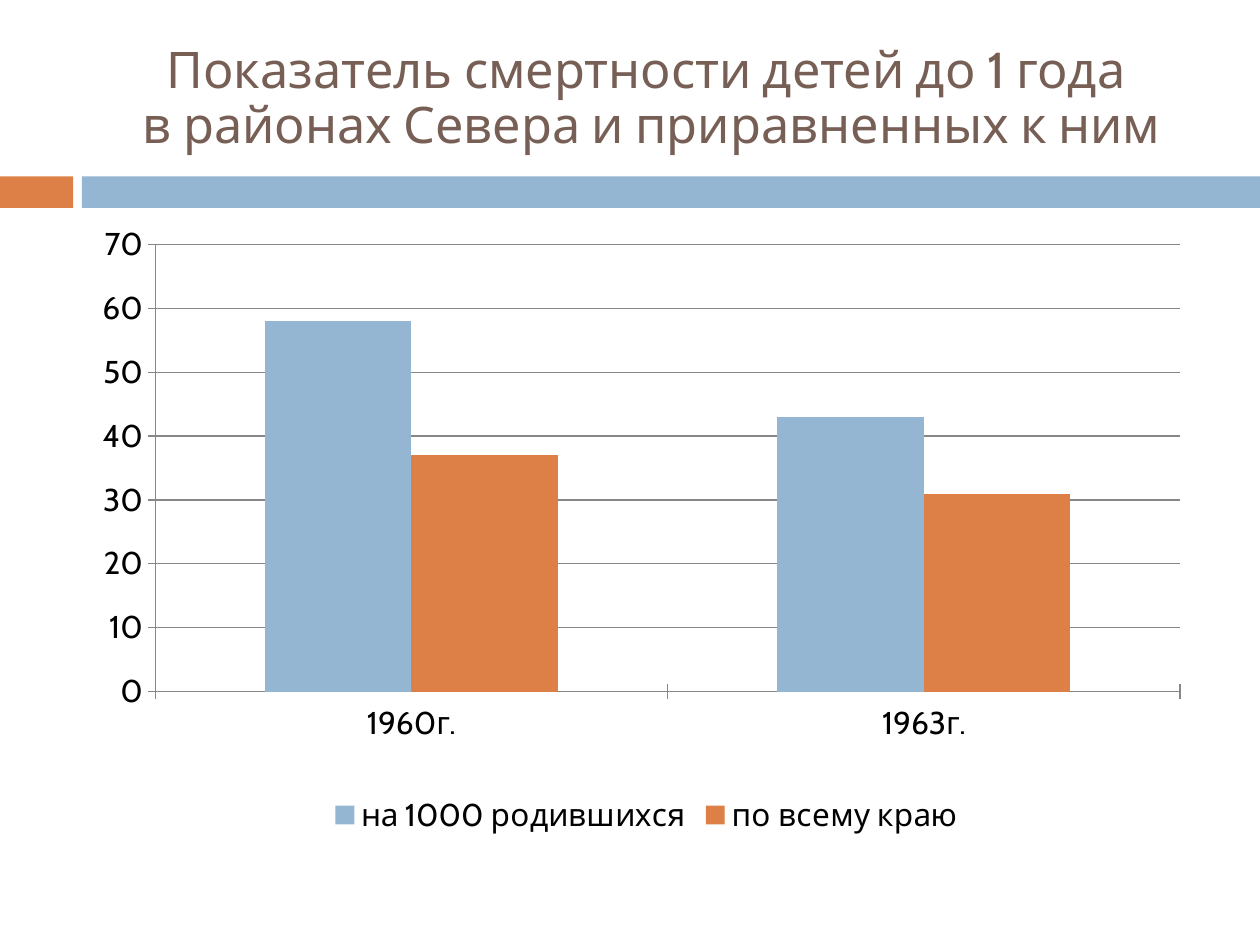
from dataclasses import dataclass

from lxml import etree
from pptx import Presentation
from pptx.chart.data import CategoryChartData
from pptx.dml.color import RGBColor
from pptx.enum.chart import XL_CHART_TYPE, XL_LEGEND_POSITION, XL_TICK_MARK
from pptx.enum.shapes import MSO_SHAPE
from pptx.enum.text import MSO_ANCHOR, MSO_AUTO_SIZE, PP_ALIGN
from pptx.oxml.ns import qn
from pptx.util import Inches, Pt

COLUMN = XL_CHART_TYPE.COLUMN_CLUSTERED
BOTTOM = XL_LEGEND_POSITION.BOTTOM
CROSS = XL_TICK_MARK.CROSS
RECT = MSO_SHAPE.RECTANGLE
MIDDLE = MSO_ANCHOR.MIDDLE
NO_FIT = MSO_AUTO_SIZE.NONE
CENTER = PP_ALIGN.CENTER


@dataclass(frozen=True)
class Theme:
    """Colours, font and type sizes of the slide."""
    blue: RGBColor = RGBColor.from_string("94B6D2")
    orange: RGBColor = RGBColor.from_string("DD8047")
    brown: RGBColor = RGBColor.from_string("775F55")
    black: RGBColor = RGBColor.from_string("000000")
    gray: RGBColor = RGBColor.from_string("878787")
    font: str = "Cabin"
    title: Pt = Pt(28.8)
    label: Pt = Pt(18)


THEME = Theme()
TITLE = ("Показатель смертности детей до 1 года\v"
         " в районах Севера и приравненных к ним")
YEARS = ["1960г.", "1963г."]
RATES = [
    ("на 1000 родившихся", (58, 43), THEME.blue),
    ("по всему краю", (37, 31), THEME.orange),
]
BANDS = [
    ((0, 1.4, 0.58, 0.25), THEME.orange),
    ((0.65, 1.4, 9.35, 0.25), THEME.blue),
]
PLOT = {"x": 0.063, "y": 0.039, "w": 0.912, "h": 0.721}


def apply(target, **values):
    """Set each named value on the target."""
    for name, value in values.items():
        setattr(target, name, value)


def style(font, size, color):
    """Give a font the theme face, a size and a colour."""
    apply(font, name=THEME.font, size=size, bold=False)
    font.color.rgb = color


def add_band(slide, box, color):
    """Draw one plain colour band."""
    band = slide.shapes.add_shape(RECT, *map(Inches, box))
    band.shadow.inherit = False
    band.fill.solid()
    band.fill.fore_color.rgb = color
    band.line.fill.background()


def set_title(slide, text, box):
    """Place and format the title."""
    title = slide.shapes.title
    apply(title, **dict(zip(("left", "top", "width", "height"), map(Inches, box))))
    frame = title.text_frame
    apply(frame, text=text, vertical_anchor=MIDDLE, word_wrap=True, auto_size=NO_FIT)
    line = frame.paragraphs[0]
    apply(line, alignment=CENTER, line_spacing=0.9)
    for run in line.runs:
        style(run.font, THEME.title, THEME.brown)


def set_plot(chart, place):
    """Fix the inner plot area as shares of the chart."""
    area = chart.plots[0]._element.getparent()
    for old in area.findall(qn("c:layout")):
        area.remove(old)
    layout = etree.Element(qn("c:layout"))
    area.insert(0, layout)
    manual = etree.SubElement(layout, qn("c:manualLayout"))
    modes = {"layoutTarget": "inner", "xMode": "edge", "yMode": "edge"}
    for name, value in {**modes, **place}.items():
        etree.SubElement(manual, qn(f"c:{name}")).set("val", str(value))


def add_rates(slide, box):
    """Add the column chart of the death rates."""
    data = CategoryChartData()
    data.categories = YEARS
    for name, values, _ in RATES:
        data.add_series(name, values)
    chart = slide.shapes.add_chart(COLUMN, *map(Inches, box), data).chart
    apply(chart, has_title=False, has_legend=True)
    style(chart.font, THEME.label, THEME.black)
    apply(chart.legend, position=BOTTOM, include_in_layout=False)
    apply(chart.plots[0], gap_width=150, overlap=0, vary_by_categories=False)
    apply(chart.value_axis, minimum_scale=0, maximum_scale=70, major_unit=10)
    for series, (_, _, color) in zip(chart.plots[0].series, RATES):
        series.format.fill.solid()
        series.format.fill.fore_color.rgb = color
    for axis in (chart.category_axis, chart.value_axis):
        axis.major_tick_mark = CROSS
    for part in (chart.category_axis, chart.value_axis, chart.value_axis.major_gridlines):
        part.format.line.color.rgb = THEME.gray
        part.format.line.width = Pt(0.75)
    set_plot(chart, PLOT)


def main():
    """Build and save the slide."""
    deck = Presentation()
    apply(deck, slide_width=Inches(10), slide_height=Inches(7.5))
    slide = deck.slides.add_slide(deck.slide_layouts[5])
    for box, color in BANDS:
        add_band(slide, box, color)
    set_title(slide, TITLE, (0.67, 0.25, 8.92, 1.08))
    add_rates(slide, (0.67, 1.75, 8.92, 4.92))
    deck.save("out.pptx")


if __name__ == "__main__":
    main()
